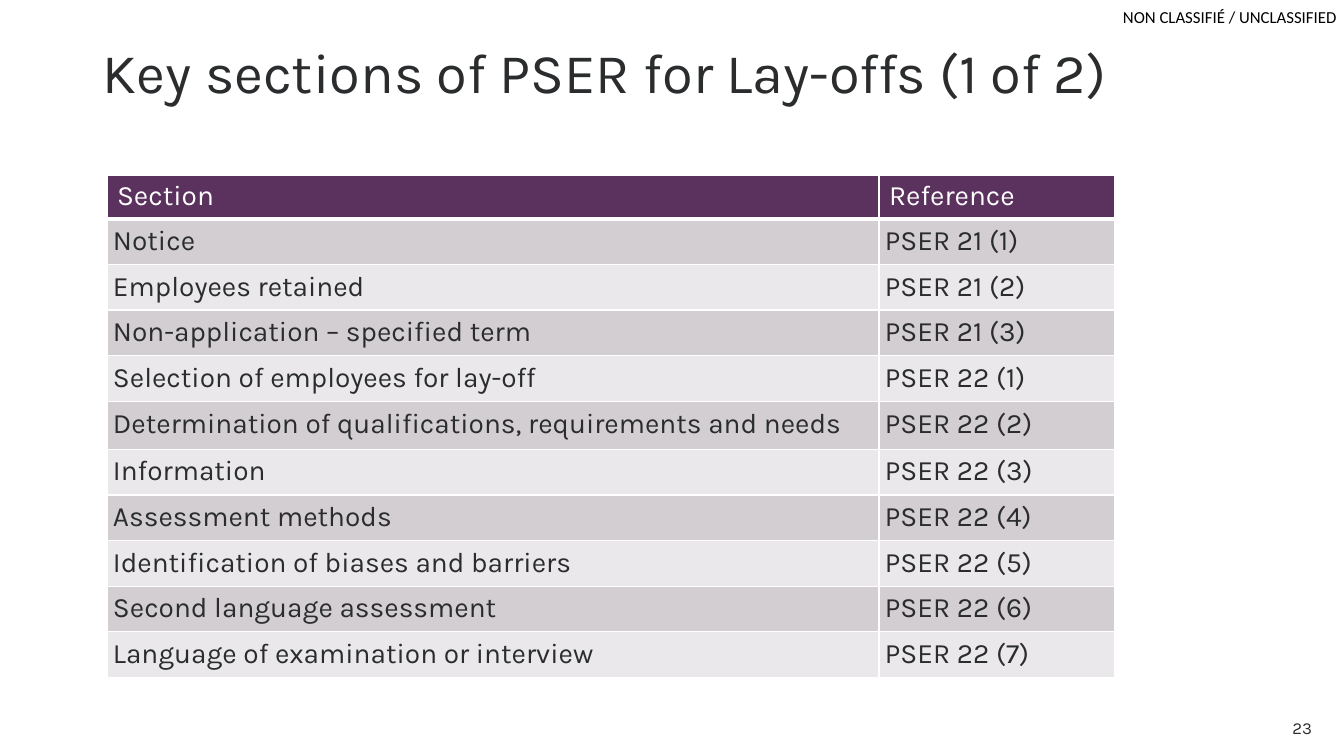
import pptx
import pptx.dml.color
import pptx.enum.text
import pptx.oxml.ns
import pptx.util
import lxml.etree

EMU_PER_INCH = 914400
PX_PER_INCH = 100.8
INK, WHITE, BLACK = "2A2C2D", "FFFFFF", "000000"
PURPLE, BANDS = "5B315E", ("D2CED2", "EAE8EA")
ALIGN = pptx.enum.text.PP_ALIGN
ANCHOR = pptx.enum.text.MSO_ANCHOR


def px(length):
    return pptx.util.Emu(round(length * EMU_PER_INCH / PX_PER_INCH))


def color(value):
    return pptx.dml.color.RGBColor.from_string(value)


presentation = pptx.Presentation()
presentation.slide_width, presentation.slide_height = px(1344), px(756)
slide = presentation.slides.add_slide(presentation.slide_layouts[6])

# Classification label, title and page number
texts = [
    ("NON CLASSIFIÉ / UNCLASSIFIED", (1123, 7, 218, 20), 12, "Calibri", BLACK,
     ALIGN.LEFT, ANCHOR.TOP, (0, 0)),
    ("Key sections of PSER for Lay-offs (1 of 2)", (93, 18, 1159, 115), 40, "Karla", INK,
     ALIGN.LEFT, ANCHOR.MIDDLE, (10, 5)),
    ("23", (1190, 708, 132, 40), 12, "Karla", INK,
     ALIGN.RIGHT, ANCHOR.MIDDLE, (10, 5)),
]
for text, box, size, font, ink, align, anchor, (inset_x, inset_y) in texts:
    shape = slide.shapes.add_textbox(*map(px, box))
    frame = shape.text_frame
    frame.word_wrap = True
    frame.vertical_anchor = anchor
    frame.margin_left = frame.margin_right = px(inset_x)
    frame.margin_top = frame.margin_bottom = px(inset_y)
    paragraph = frame.paragraphs[0]
    paragraph.alignment = align
    if size == 40:
        paragraph.line_spacing = 0.9
    run = paragraph.add_run()
    run.text = text
    run.font.size = pptx.util.Pt(size)
    run.font.name = font
    run.font.color.rgb = color(ink)

# Table of sections
sections = [
    ("Section", "Reference"),
    ("Notice", "PSER 21 (1)"),
    ("Employees retained", "PSER 21 (2)"),
    ("Non-application – specified term", "PSER 21 (3)"),
    ("Selection of employees for lay-off", "PSER 22 (1)"),
    ("Determination of qualifications, requirements and needs", "PSER 22 (2)"),
    ("Information", "PSER 22 (3)"),
    ("Assessment methods", "PSER 22 (4)"),
    ("Identification of biases and barriers", "PSER 22 (5)"),
    ("Second language assessment", "PSER 22 (6)"),
    ("Language of examination or interview", "PSER 22 (7)"),
]
row_heights = [42] + [44] * 10
row_heights[5] = 48
column_widths = [772, 236]
table = slide.shapes.add_table(
    len(sections), 2, px(107), px(175), px(sum(column_widths)), px(sum(row_heights))).table
for column, width in zip(table.columns, column_widths):
    column.width = px(width)

for row_index, labels in enumerate(sections):
    table.rows[row_index].height = px(row_heights[row_index])
    header = row_index == 0
    for column_index, label in enumerate(labels):
        cell = table.cell(row_index, column_index)

        # White rules, heavier under the header
        properties = cell._tc.get_or_add_tcPr()
        for side in "LRTB":
            heavy = (row_index, side) in ((0, "B"), (1, "T"))
            line = lxml.etree.SubElement(properties, pptx.oxml.ns.qn(f"a:ln{side}"),
                                         w=str(pptx.util.Pt(3 if heavy else 1)))
            fill = lxml.etree.SubElement(line, pptx.oxml.ns.qn("a:solidFill"))
            lxml.etree.SubElement(fill, pptx.oxml.ns.qn("a:srgbClr"), val=WHITE)

        cell.fill.solid()
        cell.fill.fore_color.rgb = color(PURPLE if header else BANDS[(row_index - 1) % 2])
        paragraph = cell.text_frame.paragraphs[0]
        if not header:
            cell.margin_left = cell.margin_right = px(6)
            cell.margin_top = cell.margin_bottom = px(6)
            paragraph.space_after = pptx.util.Pt(8)
        run = paragraph.add_run()
        run.text = label
        run.font.size = pptx.util.Pt(20)
        run.font.name = "Karla"
        run.font.bold = False
        run.font.color.rgb = color(WHITE if header else INK)

presentation.save("out.pptx")
